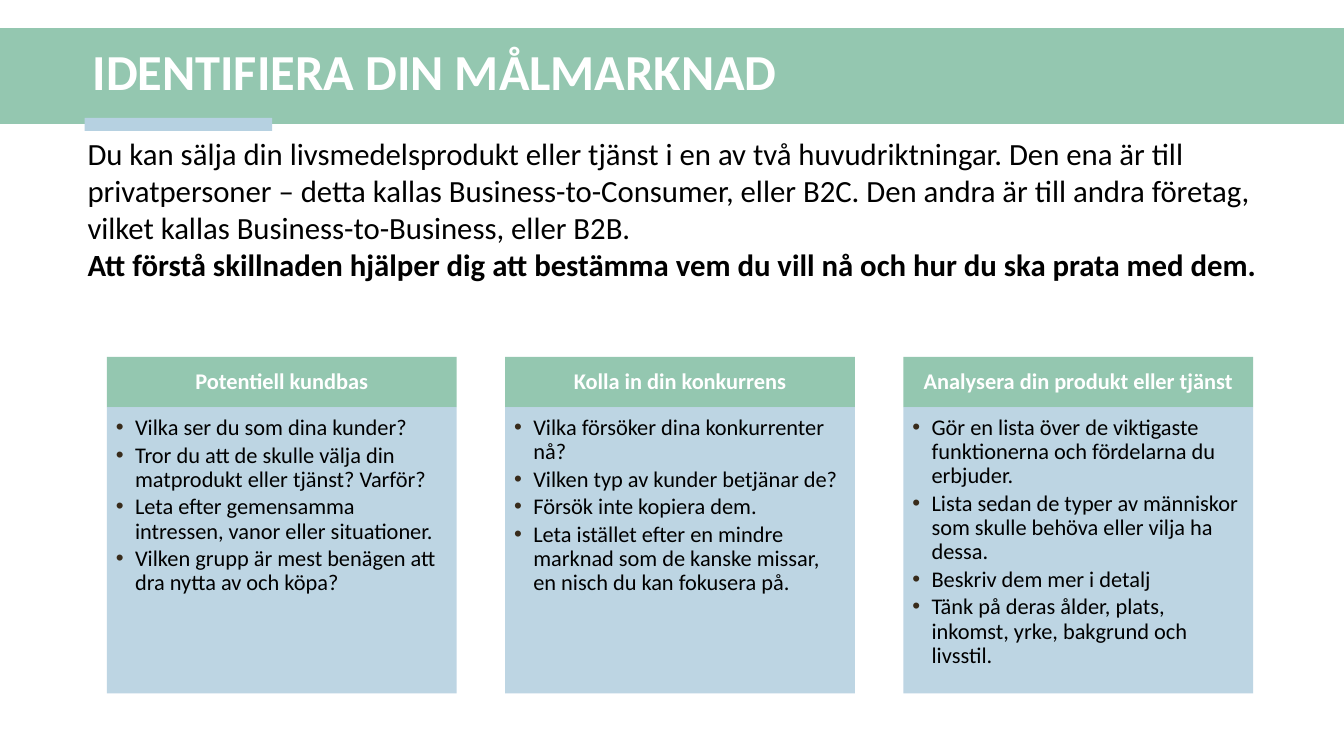
from lxml import etree
from pptx import Presentation
from pptx import util as u
from pptx.dml.color import RGBColor
from pptx.enum import shapes, text
from pptx.oxml.ns import qn

GREEN = RGBColor(0x94, 0xC7, 0xB0)
BLUE = RGBColor(0xB6, 0xD1, 0xE1)
BROWN = RGBColor(0x38, 0x2B, 0x1B)
WHITE = RGBColor(255, 255, 255)
BLACK = RGBColor(0, 0, 0)

TITLE = "IDENTIFIERA DIN MÅLMARKNAD"
INTRO = (
    "Du kan sälja din livsmedelsprodukt eller tjänst i en av två huvudriktningar. "
    "Den ena är till privatpersoner – detta kallas Business-to-Consumer, eller B2C. "
    "Den andra är till andra företag, vilket kallas Business-to-Business, eller B2B."
)
POINT = ("Att förstå skillnaden hjälper dig att bestämma vem du vill nå "
         "och hur du ska prata med dem.")
CARDS = [
    ("Potentiell kundbas", [
        "Vilka ser du som dina kunder?",
        "Tror du att de skulle välja din matprodukt eller tjänst? Varför?",
        "Leta efter gemensamma intressen, vanor eller situationer.",
        "Vilken grupp är mest benägen att dra nytta av och köpa?",
    ]),
    ("Kolla in din konkurrens", [
        "Vilka försöker dina konkurrenter nå?",
        "Vilken typ av kunder betjänar de?",
        "Försök inte kopiera dem.",
        "Leta istället efter en mindre marknad som de kanske missar, "
        "en nisch du kan fokusera på.",
    ]),
    ("Analysera din produkt eller tjänst", [
        "Gör en lista över de viktigaste funktionerna och fördelarna du erbjuder.",
        "Lista sedan de typer av människor som skulle behöva eller vilja ha dessa.",
        "Beskriv dem mer i detalj",
        "Tänk på deras ålder, plats, inkomst, yrke, bakgrund och livsstil.",
    ]),
]


def place(x, y, w, h):
    return [u.Inches(n) for n in (x, y, w, h)]


def add_rect(slide, box, color):
    rect = slide.shapes.add_shape(shapes.MSO_SHAPE.RECTANGLE, *place(*box))
    rect.shadow.inherit = False
    rect.fill.solid()
    rect.fill.fore_color.rgb = color
    rect.line.fill.background()
    return rect


def set_frame(frame, anchor, pads=(0.1, 0.05, 0.1, 0.05)):
    frame.word_wrap = True
    frame.auto_size = text.MSO_AUTO_SIZE.NONE
    frame.vertical_anchor = anchor
    (frame.margin_left, frame.margin_top,
     frame.margin_right, frame.margin_bottom) = place(*pads)


def add_run(para, words, size, color, bold=False):
    run = para.add_run()
    run.text = words
    font = run.font
    font.name, font.size, font.bold = "Calibri", u.Pt(size), bold
    font.color.rgb = color


def next_para(frame, index, align=text.PP_ALIGN.LEFT, pitch=0.9):
    para = frame.add_paragraph() if index else frame.paragraphs[0]
    para.alignment = align
    para.line_spacing = pitch
    para.space_before = u.Pt(0)
    return para


def add_bullet(para):
    props = para._p.get_or_add_pPr()
    props.set("marL", str(u.Inches(0.19)))
    props.set("indent", str(-u.Inches(0.19)))
    tint = etree.SubElement(props, qn("a:buClr"))
    etree.SubElement(tint, qn("a:srgbClr"), val=str(BROWN))
    etree.SubElement(props, qn("a:buFont"), typeface="Arial")
    etree.SubElement(props, qn("a:buChar"), char="•")


def add_title(slide):
    title = slide.shapes.title
    title.left, title.top, title.width, title.height = place(0.82, 0.34, 11.93, 0.79)
    slide.shapes.element.append(title.element)
    set_frame(title.text_frame, text.MSO_ANCHOR.MIDDLE)
    add_run(next_para(title.text_frame, 0), TITLE, 36, WHITE, True)


def add_card(slide, left, head, items):
    bar = add_rect(slide, (left, 3.54, 3.47, 0.5), GREEN)
    set_frame(bar.text_frame, text.MSO_ANCHOR.MIDDLE, (0.12, 0.07, 0.12, 0.07))
    para = next_para(bar.text_frame, 0, text.PP_ALIGN.CENTER)
    add_run(para, head, 16, WHITE, True)

    panel = add_rect(slide, (left, 4.04, 3.47, 2.84), BLUE)
    tint = panel.element.spPr.find(qn("a:solidFill"))[0]
    etree.SubElement(tint, qn("a:alpha"), val="90000")
    set_frame(panel.text_frame, text.MSO_ANCHOR.TOP, (0.09, 0.09, 0.12, 0.14))
    for index, item in enumerate(items):
        para = next_para(panel.text_frame, index)
        para.space_after = u.Pt(2.4)
        add_bullet(para)
        add_run(para, item, 16, BLACK)


def add_intro(slide):
    frame = slide.shapes.add_textbox(*place(0.77, 1.29, 11.8, 1.95)).text_frame
    set_frame(frame, text.MSO_ANCHOR.TOP)
    for index, (words, bold) in enumerate([(INTRO, False), (POINT, True)]):
        add_run(next_para(frame, index, pitch=1.0), words, 22, BLACK, bold)


def main():
    deck = Presentation()
    deck.slide_width, deck.slide_height = u.Inches(13.33), u.Inches(7.5)
    slide = deck.slides.add_slide(deck.slide_layouts[5])
    add_rect(slide, (0, 0.28, 13.33, 0.95), GREEN)
    add_rect(slide, (0.84, 1.17, 1.86, 0.13), BLUE)
    add_title(slide)
    for index, (head, items) in enumerate(CARDS):
        add_card(slide, 1.06 + 3.95 * index, head, items)
    add_intro(slide)
    deck.save("out.pptx")


if __name__ == "__main__":
    main()
